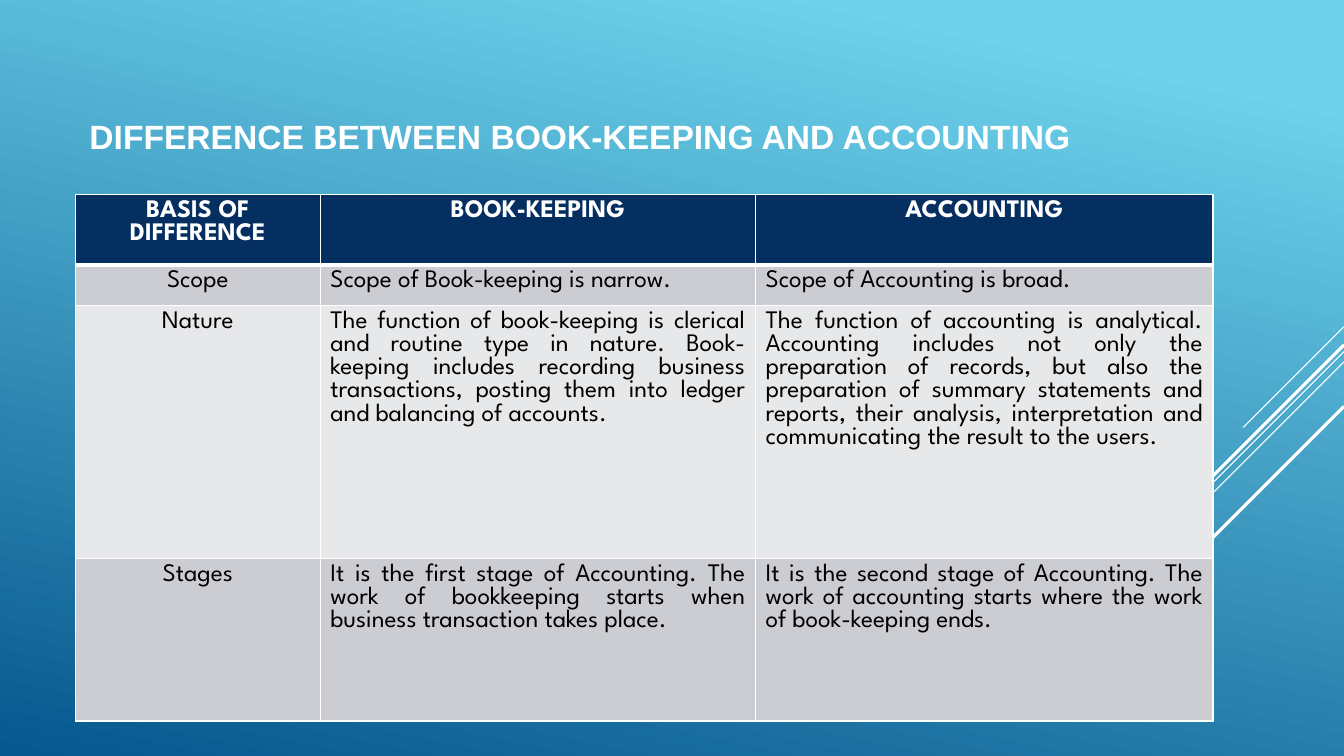
import lxml.etree
import pptx
import pptx.dml.color
import pptx.enum.shapes
import pptx.enum.text
import pptx.oxml.ns
import pptx.util

Cm = pptx.util.Cm
Pt = pptx.util.Pt
RGBColor = pptx.dml.color.RGBColor
Align = pptx.enum.text.PP_ALIGN
qn = pptx.oxml.ns.qn

SKY = RGBColor(0x6E, 0xD2, 0xEB)
OCEAN = RGBColor(0x06, 0x58, 0x8E)
NAVY = RGBColor(0x05, 0x2F, 0x61)
GREY = RGBColor(0xCC, 0xCD, 0xD2)
PALE = RGBColor(0xE7, 0xE8, 0xEA)
WHITE = RGBColor(0xFF, 0xFF, 0xFF)
BLACK = RGBColor(0, 0, 0)

SLIDE_WIDTH, SLIDE_HEIGHT = Cm(33.87), Cm(19.05)
COLUMN_WIDTHS = [6.17, 10.97, 11.53]
ROW_HEIGHTS = [1.78, 1.02, 6.38, 4.09]
STRIPES = [(8.23, 2.54, 0.75), (8.86, 8.28, 0.75), (9.12, 5.27, 0.75),
           (8.69, 4.85, 2.25), (10.24, 3.53, 2.25)]
COMPARISON = [
    ("BASIS OF DIFFERENCE", "BOOK-KEEPING", "ACCOUNTING"),
    ("Scope", "Scope of Book-keeping is narrow.", "Scope of Accounting is broad."),
    ("Nature",
     "The function of book-keeping is clerical and routine type in nature. "
     "Book-keeping includes recording business transactions, posting them into "
     "ledger and balancing of accounts.",
     "The function of accounting is analytical. Accounting includes not only the "
     "preparation of records, but also the preparation of summary statements and "
     "reports, their analysis, interpretation and communicating the result to the users."),
    ("Stages",
     "It is the first stage of Accounting. The work of bookkeeping starts when "
     "business transaction takes place.",
     "It is the second stage of Accounting. The work of accounting starts where "
     "the work of book-keeping ends."),
]


def paint_background(slide):
    fill = slide.background.fill
    fill.gradient()
    fill.gradient_angle = 258
    for stop, color, position in zip(fill.gradient_stops, (SKY, OCEAN), (0.1, 1)):
        stop.color.rgb = color
        stop.position = position


def add_stripes(slide, right):
    for top, run, weight in STRIPES:
        stripe = slide.shapes.add_connector(
            pptx.enum.shapes.MSO_CONNECTOR.STRAIGHT,
            right, Cm(top), right - Cm(run), Cm(top + run))
        stripe.line.color.rgb = WHITE
        stripe.line.width = Pt(weight)
        lxml.etree.SubElement(stripe.element.spPr, qn("a:effectLst"))


def set_title(slide, text, left, top, width, height):
    title = slide.shapes.title
    title.left, title.top, title.width, title.height = left, top, width, height
    title.text_frame.text = text
    title.text_frame.vertical_anchor = pptx.enum.text.MSO_ANCHOR.MIDDLE
    paragraph = title.text_frame.paragraphs[0]
    paragraph.alignment = Align.LEFT
    set_font(paragraph, "Arial", 24, True, WHITE)


def set_font(paragraph, name, size, bold, color):
    font = paragraph.font
    font.name = name
    font.size = Pt(size)
    font.bold = bold
    font.color.rgb = color


def set_borders(cell, top, bottom):
    properties = cell._tc.get_or_add_tcPr()
    for side, weight in (("L", 1), ("R", 1), ("T", top), ("B", bottom)):
        border = lxml.etree.SubElement(properties, qn(f"a:ln{side}"), w=str(Pt(weight)))
        fill = lxml.etree.SubElement(border, qn("a:solidFill"))
        lxml.etree.SubElement(fill, qn("a:srgbClr"), val=str(WHITE))


def add_comparison(slide, left, top):
    table = slide.shapes.add_table(
        len(ROW_HEIGHTS), len(COLUMN_WIDTHS), left, top,
        Cm(sum(COLUMN_WIDTHS)), Cm(sum(ROW_HEIGHTS))).table
    for column, width in zip(table.columns, COLUMN_WIDTHS):
        column.width = Cm(width)
    for row_index, texts in enumerate(COMPARISON):
        table.rows[row_index].height = Cm(ROW_HEIGHTS[row_index])
        header = row_index == 0
        for column_index, text in enumerate(texts):
            cell = table.cell(row_index, column_index)
            set_borders(cell, 3 if row_index == 1 else 1, 3 if header else 1)
            cell.fill.solid()
            cell.fill.fore_color.rgb = NAVY if header else (PALE, GREY)[row_index % 2]
            cell.text = text
            paragraph = cell.text_frame.paragraphs[0]
            centred = header or column_index == 0
            paragraph.alignment = Align.CENTER if centred else Align.JUSTIFY
            set_font(paragraph, "League Spartan", 18, header, WHITE if header else BLACK)


def main():
    presentation = pptx.Presentation()
    presentation.slide_width = SLIDE_WIDTH
    presentation.slide_height = SLIDE_HEIGHT
    slide = presentation.slides.add_slide(presentation.slide_layouts[5])
    paint_background(slide)
    add_stripes(slide, SLIDE_WIDTH)
    add_comparison(slide, Cm(1.9), Cm(4.9))
    set_title(slide, "DIFFERENCE BETWEEN BOOK-KEEPING AND ACCOUNTING",
              Cm(2), Cm(2.26), Cm(28.4), Cm(2.34))
    presentation.save("out.pptx")


if __name__ == "__main__":
    main()
